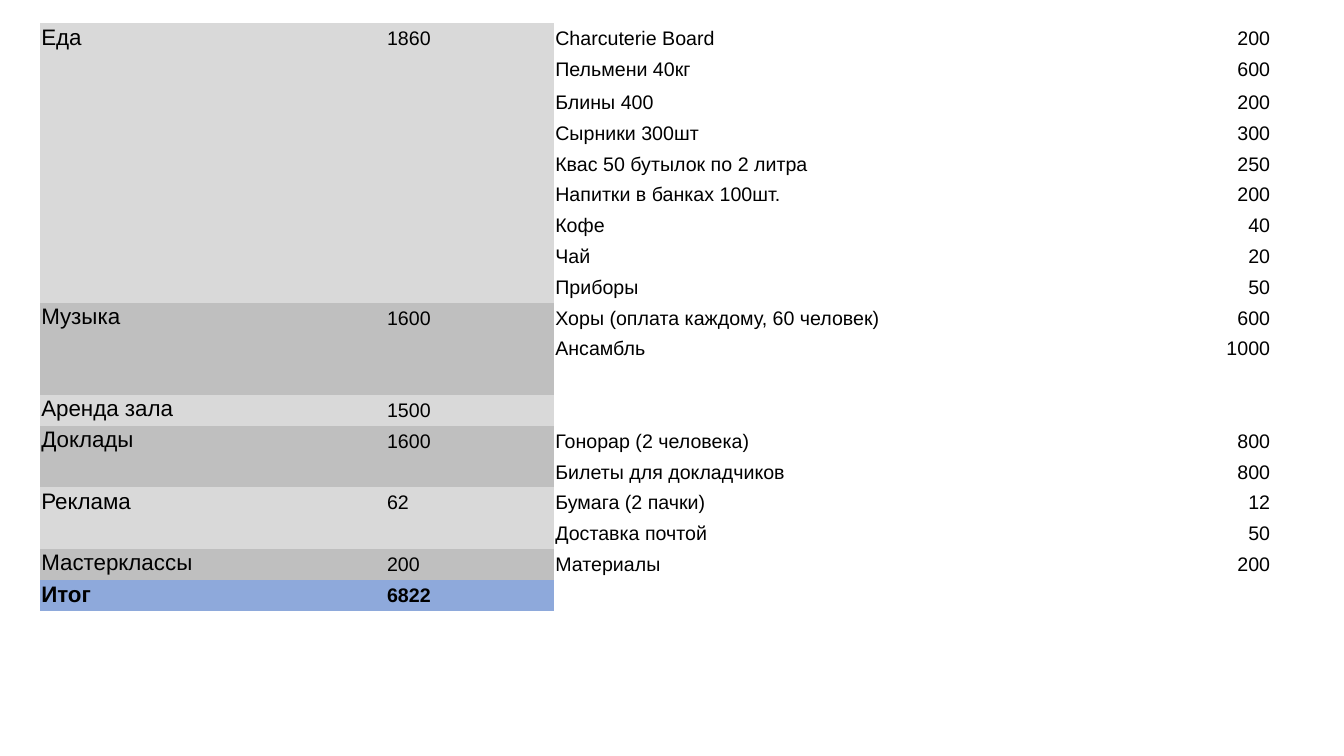
from pptx import Presentation
from pptx.dml.color import RGBColor
from pptx.enum.text import MSO_ANCHOR as Anchor, PP_ALIGN as Align
from pptx.oxml.ns import qn
from pptx.util import Pt

BLACK = RGBColor(0x00, 0x00, 0x00)
LIGHT_GREY = RGBColor(0xD9, 0xD9, 0xD9)
MID_GREY = RGBColor(0xBF, 0xBF, 0xBF)
TOTAL_BLUE = RGBColor(0x8E, 0xA9, 0xDB)
PLAIN_TABLE_STYLE = "{2D5ABB26-0587-4C30-8999-92F81FD0307C}"

# Category, its sum, and its expense lines; an empty line leaves a blank row
BUDGET = [
    ("Еда", 1860, [
        ("Charcuterie Board", 200),
        ("Пельмени 40кг", 600),
        ("Блины 400", 200),
        ("Сырники 300шт", 300),
        ("Квас 50 бутылок по 2 литра", 250),
        ("Напитки в банках 100шт.", 200),
        ("Кофе", 40),
        ("Чай", 20),
        ("Приборы", 50),
    ]),
    ("Музыка", 1600, [
        ("Хоры (оплата каждому, 60 человек)", 600),
        ("Ансамбль", 1000),
        ("", ""),
    ]),
    ("Аренда зала", 1500, [("", "")]),
    ("Доклады", 1600, [
        ("Гонорар (2 человека)", 800),
        ("Билеты для докладчиков", 800),
    ]),
    ("Реклама", 62, [
        ("Бумага (2 пачки)", 12),
        ("Доставка почтой", 50),
    ]),
    ("Мастерклассы", 200, [("Материалы", 200)]),
    ("Итог", 6822, [("", "")]),
]
COLUMN_WIDTHS = [247, 120.2, 419, 93.6]
ROW_HEIGHT = 22
SPECIAL_HEIGHTS = {2: 23.7, 18: 22.4}


class BudgetSlide:
    """Holds the text style and the slide being filled."""

    font_name = "Arial"
    category_size = 16
    text_size = 14

    def __init__(self, presentation):
        self.slide = presentation.slides.add_slide(presentation.slide_layouts[6])

    def add_table(self, left, top, widths, heights):
        frame = self.slide.shapes.add_table(
            len(heights), len(widths), Pt(left), Pt(top),
            Pt(sum(widths)), Pt(sum(heights)))
        table = frame.table
        table.first_row = table.horz_banding = False
        next(frame.element.iter(qn("a:tableStyleId"))).text = PLAIN_TABLE_STYLE
        for column, width in zip(table.columns, widths):
            column.width = Pt(width)
        for row, height in zip(table.rows, heights):
            row.height = Pt(height)
        return table

    def fill_cell(self, cell, text, size, color=None, align=Align.LEFT, bold=False):
        if color is None:
            cell.fill.background()
        else:
            cell.fill.solid()
            cell.fill.fore_color.rgb = color
        cell.vertical_anchor = Anchor.BOTTOM
        cell.margin_left = cell.margin_right = Pt(1)
        cell.margin_top = cell.margin_bottom = Pt(0)
        if text == "":
            return
        cell.margin_top, cell.margin_bottom = Pt(0.5), Pt(3)
        cell.text = str(text)
        paragraph = cell.text_frame.paragraphs[0]
        paragraph.alignment = align
        font = paragraph.font
        font.name, font.size, font.bold = self.font_name, Pt(size), bold
        font.color.rgb = BLACK

    def fill_row(self, table, row, values, color, bold):
        category, total, item, price = values
        self.fill_cell(table.cell(row, 0), category, self.category_size, color, bold=bold)
        self.fill_cell(table.cell(row, 1), total, self.text_size, color, bold=bold)
        self.fill_cell(table.cell(row, 2), item, self.text_size)
        self.fill_cell(table.cell(row, 3), price, self.text_size, align=Align.RIGHT)


def main():
    presentation = Presentation()
    presentation.slide_width, presentation.slide_height = Pt(960), Pt(540)
    budget = BudgetSlide(presentation)

    # Table frame
    row_count = sum(len(items) for _, _, items in BUDGET)
    heights = [SPECIAL_HEIGHTS.get(row, ROW_HEIGHT) for row in range(row_count)]
    table = budget.add_table(28.5, 16.5, COLUMN_WIDTHS, heights)

    # Categories in alternating greys, the total in blue
    row = 0
    for index, (category, total, items) in enumerate(BUDGET):
        is_total = index == len(BUDGET) - 1
        color = TOTAL_BLUE if is_total else (LIGHT_GREY, MID_GREY)[index % 2]
        for position, (item, price) in enumerate(items):
            heading = (category, total) if position == 0 else ("", "")
            budget.fill_row(table, row, (*heading, item, price), color, is_total)
            row += 1

    presentation.save("out.pptx")


if __name__ == "__main__":
    main()
